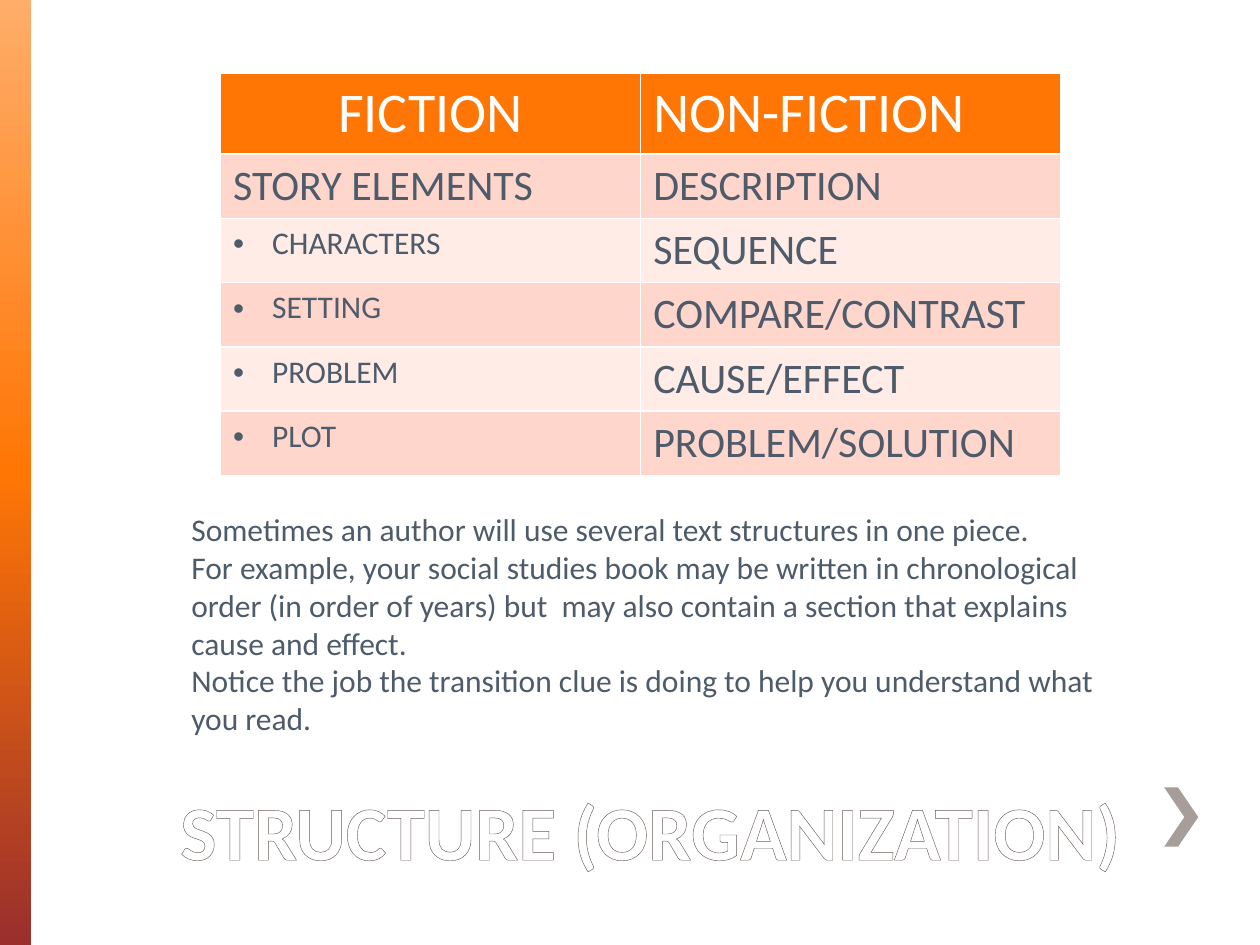
from copy import deepcopy
from dataclasses import dataclass

from lxml.etree import SubElement
from pptx import Presentation
from pptx.dml.color import RGBColor
from pptx.enum.shapes import MSO_SHAPE
from pptx.enum.text import MSO_ANCHOR, MSO_AUTO_SIZE, PP_ALIGN
from pptx.oxml.ns import qn
from pptx.util import Inches, Pt


@dataclass(frozen=True)
class Theme:
    font: str = "Calibri"
    white: str = "FFFFFF"
    ink: str = "4D5B6B"
    outline: str = "675D59"
    chevron: str = "A79D99"
    header: str = "FF7605"
    bands: tuple = ("FFD6CC", "FFECE7")
    bar: tuple = ((0, "FFAD69"), (0.5, "FF7605"), (1, "9A2F2C"))
    title_size: int = 44
    header_size: int = 32
    cell_size: int = 24
    body_size: int = 18


THEME = Theme()

STRUCTURES = [
    ("FICTION", "NON-FICTION"),
    ("STORY ELEMENTS", "DESCRIPTION"),
    ("CHARACTERS", "SEQUENCE"),
    ("SETTING", "COMPARE/CONTRAST"),
    ("PROBLEM", "CAUSE/EFFECT"),
    ("PLOT", "PROBLEM/SOLUTION"),
]
FIRST_BULLET_ROW = 2

EXPLANATION = [
    "Sometimes an author will use several text structures in one piece.",
    "For example, your social studies book may be written in chronological order "
    "(in order of years) but  may also contain a section that explains",
    "cause and effect.",
    "Notice the job the transition clue is doing to help you understand what you read.",
]


def rgb(colour):
    return RGBColor.from_string(colour)


def add_line(parent, tag, colour, width):
    line = SubElement(parent, qn(tag), w=str(Pt(width)))
    fill = SubElement(line, qn("a:solidFill"))
    SubElement(fill, qn("a:srgbClr"), val=colour)
    return line


def write(paragraph, text, size, colour=THEME.ink, bold=False,
          align=PP_ALIGN.LEFT, bullet=False, outline=None):
    paragraph.alignment = align
    run = paragraph.add_run()
    run.text = text
    font = run.font
    font.name, font.size, font.bold = THEME.font, Pt(size), bold
    font.color.rgb = rgb(colour)
    if outline:
        properties = run._r.get_or_add_rPr()
        properties.insert(0, add_line(properties, "a:ln", outline, 1))
    if bullet:
        properties = paragraph._p.get_or_add_pPr()
        indent = Inches(0.31)
        properties.set("marL", str(indent))
        properties.set("indent", str(-indent))
        SubElement(properties, qn("a:buFont"), typeface="Arial")
        SubElement(properties, qn("a:buChar"), char="•")


def add_side_bar(slide, left, top, width, height):
    bar = slide.shapes.add_shape(MSO_SHAPE.RECTANGLE, left, top, width, height)
    bar.shadow.inherit = False
    bar.line.fill.background()
    bar.fill.gradient()
    bar.fill.gradient_angle = 270
    first_stop = bar.fill.gradient_stops[0]._gs
    first_stop.addnext(deepcopy(first_stop))
    for stop, (position, colour) in zip(bar.fill.gradient_stops, THEME.bar):
        stop.position = position
        stop.color.rgb = rgb(colour)


def add_chevron(slide, left, top, width, height):
    arm = Inches(0.11)
    right, middle, bottom = left + width, top + height // 2, top + height
    builder = slide.shapes.build_freeform(left + arm, top)
    builder.add_line_segments([
        (left, top), (right - arm, middle), (left, bottom),
        (left + arm, bottom), (right, middle),
    ])
    chevron = builder.convert_to_shape()
    chevron.shadow.inherit = False
    chevron.fill.solid()
    chevron.fill.fore_color.rgb = rgb(THEME.chevron)
    chevron.line.fill.background()


def place_title(slide, left, top, width, height):
    title = slide.shapes.title
    title.left, title.top, title.width, title.height = left, top, width, height
    frame = title.text_frame
    frame.vertical_anchor = MSO_ANCHOR.BOTTOM
    frame.auto_size = MSO_AUTO_SIZE.NONE
    write(frame.paragraphs[0], "STRUCTURE (ORGANIZATION)", THEME.title_size,
          colour=THEME.white, bold=True, outline=THEME.outline)


def style_cell(cell, fill):
    properties = cell._tc.get_or_add_tcPr()
    for side in "LRTB":
        add_line(properties, f"a:ln{side}", THEME.white, 1)
    cell.fill.solid()
    cell.fill.fore_color.rgb = rgb(fill)


def add_structure_table(slide, left, top, width, header_height, row_height):
    row_count, column_count = len(STRUCTURES), len(STRUCTURES[0])
    height = header_height + row_height * (row_count - 1)
    table = slide.shapes.add_table(
        row_count, column_count, left, top, width, height).table
    for r, labels in enumerate(STRUCTURES):
        is_header = r == 0
        table.rows[r].height = header_height if is_header else row_height
        for c, label in enumerate(labels):
            cell = table.cell(r, c)
            paragraph = cell.text_frame.paragraphs[0]
            if is_header:
                style_cell(cell, THEME.header)
                write(paragraph, label, THEME.header_size, colour=THEME.white,
                      align=PP_ALIGN.CENTER if c == 0 else PP_ALIGN.LEFT)
            else:
                bullet = c == 0 and r >= FIRST_BULLET_ROW
                style_cell(cell, THEME.bands[(r - 1) % 2])
                write(paragraph, label, bullet=bullet,
                      size=THEME.body_size if bullet else THEME.cell_size)


def add_explanation(slide, left, top, width, height):
    frame = slide.shapes.add_textbox(left, top, width, height).text_frame
    frame.word_wrap = True
    for i, sentence in enumerate(EXPLANATION):
        paragraph = frame.add_paragraph() if i else frame.paragraphs[0]
        write(paragraph, sentence, THEME.body_size)


def main():
    presentation = Presentation()
    presentation.slide_width, presentation.slide_height = Inches(10), Inches(7.5)
    slide = presentation.slides.add_slide(presentation.slide_layouts[5])
    add_side_bar(slide, 0, 0, Inches(0.25), presentation.slide_height)
    add_chevron(slide, Inches(9.24), Inches(6.25), Inches(0.27), Inches(0.47))
    place_title(slide, Inches(1.33), Inches(5.75), Inches(7.92), Inches(1.25))
    add_structure_table(slide, Inches(1.75), Inches(0.58), Inches(6.67),
                        header_height=Inches(0.64), row_height=Inches(0.51))
    add_explanation(slide, Inches(1.42), Inches(4), Inches(7.75), Inches(1.92))
    presentation.save("out.pptx")


if __name__ == "__main__":
    main()
